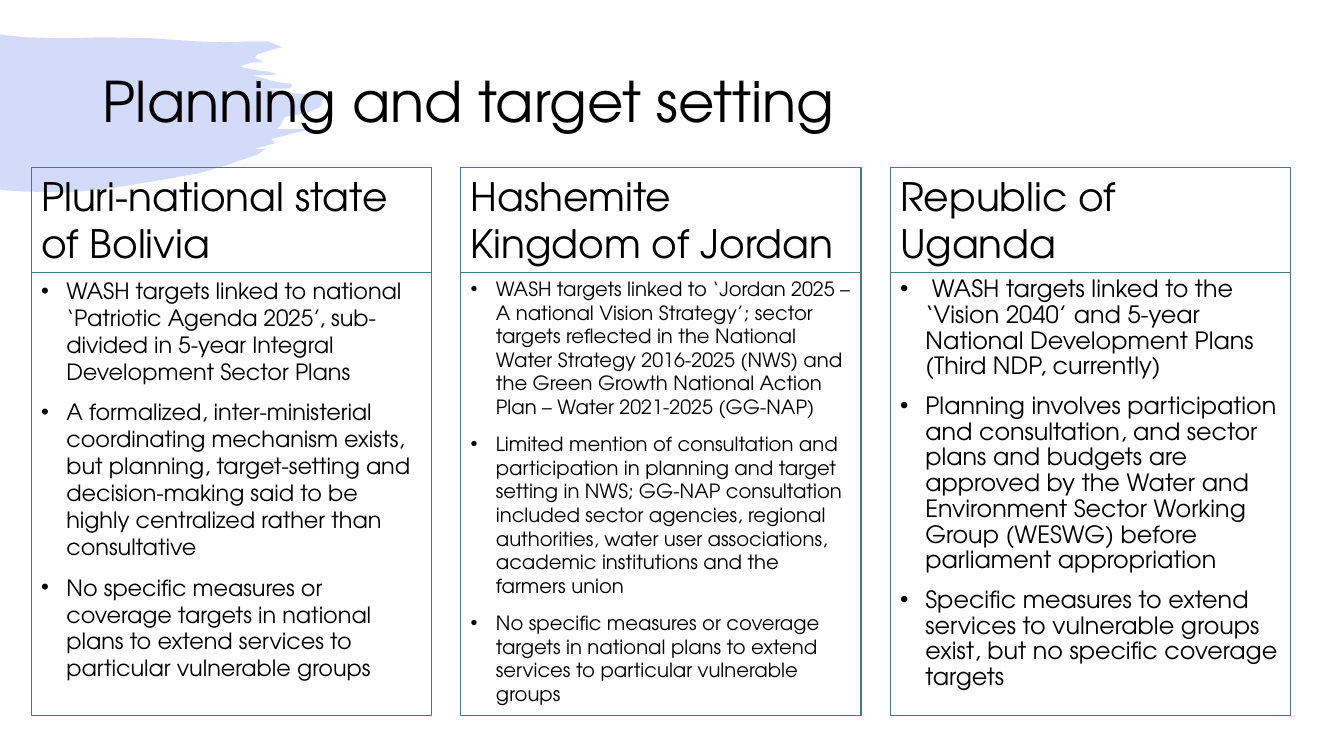
from dataclasses import dataclass

from lxml import etree
from pptx import Presentation
from pptx.dml.color import RGBColor
from pptx.enum.shapes import MSO_SHAPE
from pptx.enum.text import MSO_ANCHOR, MSO_AUTO_SIZE, PP_ALIGN
from pptx.oxml.ns import qn
from pptx.shapes.autoshape import Shape
from pptx.slide import Slide
from pptx.util import Emu, Pt

RECTANGLE = MSO_SHAPE.RECTANGLE
TOP, MIDDLE = MSO_ANCHOR.TOP, MSO_ANCHOR.MIDDLE
LEFT = PP_ALIGN.LEFT
NO_AUTOFIT = MSO_AUTO_SIZE.NONE

EMU_PER_PX = 9144
FONT = "TeX Gyre Adventor"
COLORS = {"text": "000000", "border": "457C7A", "brush": "294FE7"}
BRUSH_OPACITY = 20

COLUMN_LEFT, COLUMN_PITCH, COLUMN_WIDTH = 31, 426, 397
HEADING_TOP, HEADING_HEIGHT = 166, 104
BODY_TOP, BODY_HEIGHT = HEADING_TOP + HEADING_HEIGHT, 440
BULLET_INDENT = 25

BRUSH_POINTS = [
    (0, 34), (6, 35), (25, 37), (66, 38), (102, 37), (151, 38), (194, 41),
    (222, 42), (248, 41), (266, 41), (280, 47), (271, 49), (255, 54), (253, 57),
    (256, 59), (262, 62), (250, 62), (238, 66), (246, 68), (256, 70), (266, 71),
    (275, 74), (251, 75), (263, 78), (273, 81), (280, 82), (288, 83), (290, 85),
    (287, 88), (284, 88), (263, 88), (296, 93), (330, 94), (321, 97), (318, 106),
    (307, 111), (300, 113), (283, 116), (280, 120), (278, 125), (274, 128),
    (308, 128), (269, 138), (273, 142), (252, 148), (263, 148), (256, 153),
    (228, 163), (197, 172), (152, 180), (102, 188), (65, 191), (23, 190),
    (7, 189), (0, 188),
]


@dataclass(frozen=True)
class Country:
    name: str
    bullets: tuple[str, ...]
    size: int
    line_spacing: float = 1.0


COUNTRIES = [
    Country(
        "Pluri-national state of Bolivia",
        (
            "WASH targets linked to national ‘Patriotic Agenda 2025’, sub-divided in "
            "5-year Integral Development Sector Plans",
            "A formalized, inter-ministerial coordinating mechanism exists, but planning, "
            "target-setting and decision-making said to be highly centralized rather than "
            "consultative",
            "No specific measures or coverage targets in national plans to extend services "
            "to particular vulnerable groups",
        ),
        size=16,
    ),
    Country(
        "Hashemite Kingdom of Jordan",
        (
            "WASH targets linked to ‘Jordan 2025 – A national Vision Strategy’; sector "
            "targets reflected in the National Water Strategy 2016-2025 (NWS) and the Green "
            "Growth National Action Plan – Water 2021-2025 (GG-NAP)",
            "Limited mention of consultation and participation in planning and target "
            "setting in NWS; GG-NAP consultation included sector agencies, regional "
            "authorities, water user associations, academic institutions and the farmers "
            "union",
            "No specific measures or coverage targets in national plans to extend services "
            "to particular vulnerable groups",
        ),
        size=14,
    ),
    Country(
        "Republic of Uganda",
        (
            " WASH targets linked to the ‘Vision 2040’ and 5-year National Development "
            "Plans (Third NDP, currently)",
            "Planning involves participation and consultation, and sector plans and "
            "budgets are approved by the Water and Environment Sector Working Group (WESWG) "
            "before parliament appropriation",
            "Specific measures to extend services to vulnerable groups exist, but no "
            "specific coverage targets",
        ),
        size=17,
        line_spacing=0.9,
    ),
]


def px(value: int) -> Emu:
    return Emu(value * EMU_PER_PX)


def color(name: str) -> RGBColor:
    return RGBColor.from_string(COLORS[name])


def write_text(
    shape: Shape,
    lines: tuple[str, ...],
    *,
    size: int,
    line_spacing: float = 1.0,
    space_before: int = 0,
    anchor: MSO_ANCHOR = TOP,
    bulleted: bool = False,
) -> None:
    frame = shape.text_frame
    frame.word_wrap = True
    frame.auto_size = NO_AUTOFIT
    frame.vertical_anchor = anchor
    for index, line in enumerate(lines):
        paragraph = frame.add_paragraph() if index else frame.paragraphs[0]
        paragraph.alignment = LEFT
        paragraph.line_spacing = line_spacing
        paragraph.space_before = Pt(space_before)
        run = paragraph.add_run()
        run.text = line
        run.font.name = FONT
        run.font.size = Pt(size)
        run.font.color.rgb = color("text")
        if bulleted:
            properties = paragraph._p.get_or_add_pPr()
            properties.set("marL", str(px(BULLET_INDENT)))
            properties.set("indent", str(-px(BULLET_INDENT)))
            etree.SubElement(properties, qn("a:buFont")).set("typeface", "Arial")
            etree.SubElement(properties, qn("a:buChar")).set("char", "•")


def add_brush(slide: Slide) -> None:
    builder = slide.shapes.build_freeform(*BRUSH_POINTS[0], scale=EMU_PER_PX)
    builder.add_line_segments(BRUSH_POINTS[1:], close=True)
    brush = builder.convert_to_shape()
    brush.shadow.inherit = False
    brush.line.fill.background()
    brush.fill.solid()
    brush.fill.fore_color.rgb = color("brush")
    fill_color = brush._element.spPr.find(f".//{qn('a:srgbClr')}")
    etree.SubElement(fill_color, qn("a:alpha")).set("val", str(BRUSH_OPACITY * 1000))
    slide.shapes._spTree.insert(2, brush._element)


def add_title(slide: Slide) -> None:
    title = slide.shapes.title
    title.left, title.top, title.width, title.height = map(px, (92, 31, 1150, 145))
    write_text(title, ("Planning and target setting",), size=40, line_spacing=0.9, anchor=MIDDLE)


def add_box(slide: Slide, left: int, top: int, height: int) -> Shape:
    box = slide.shapes.add_shape(RECTANGLE, px(left), px(top), px(COLUMN_WIDTH), px(height))
    box.shadow.inherit = False
    box.fill.background()
    box.line.color.rgb = color("border")
    box.line.width = Pt(0.75)
    return box


def add_country(slide: Slide, country: Country, left: int) -> None:
    body = add_box(slide, left, BODY_TOP, BODY_HEIGHT)
    write_text(
        body,
        country.bullets,
        size=country.size,
        line_spacing=country.line_spacing,
        space_before=10,
        bulleted=True,
    )
    heading = add_box(slide, left, HEADING_TOP, HEADING_HEIGHT)
    write_text(heading, (country.name,), size=28)


def main() -> None:
    presentation = Presentation()
    presentation.slide_width, presentation.slide_height = px(1333), px(750)
    slide = presentation.slides.add_slide(presentation.slide_layouts.get_by_name("Title Only"))
    add_brush(slide)
    add_title(slide)
    for index, country in enumerate(COUNTRIES):
        add_country(slide, country, COLUMN_LEFT + index * COLUMN_PITCH)
    presentation.save("out.pptx")


if __name__ == "__main__":
    main()
